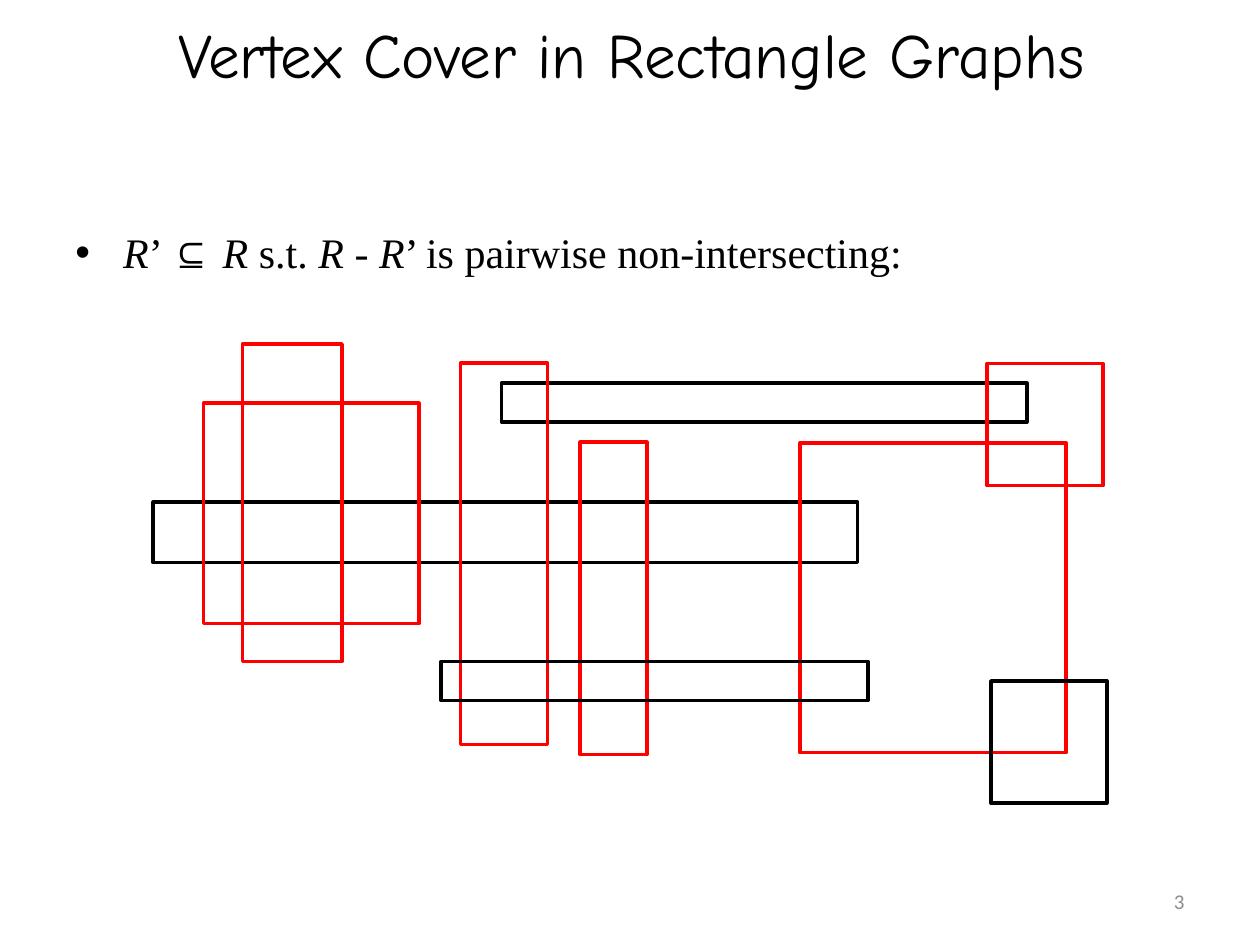
from collections import namedtuple
from dataclasses import dataclass

from lxml import etree
from pptx import Presentation
from pptx import util as u
from pptx.dml.color import RGBColor
from pptx.enum import shapes, text
from pptx.oxml.ns import qn

Box = namedtuple("Box", "left top width height")  # columns and rows of the page grid


@dataclass(frozen=True)
class Theme:
    cell: int = u.Inches(0.1)  # the page is 100 columns by 75 rows
    ink: RGBColor = RGBColor(0, 0, 0)
    cover: RGBColor = RGBColor(255, 0, 0)
    muted: RGBColor = RGBColor(0x8C, 0x8C, 0x8C)
    title_font: str = "Comic Neue"
    body_font: str = "Times New Roman"
    number_font: str = "Calibri"
    title_size: int = u.Pt(36)
    body_size: int = u.Pt(24)
    number_size: int = u.Pt(12)
    outline: int = u.Pt(2)


THEME = Theme()

STATEMENT = [  # text, italic
    ("R", True), ("’ ⊆ ", False), ("R ", True), ("s.t. ", False), ("R", True),
    (" - ", False), ("R", True), ("’ is pairwise non-intersecting:", False),
]

# Rectangles relative to the diagram's top left corner, from back to front
INDEPENDENT_BACK = [Box(0, 12.55, 55.9, 4.8), Box(27.65, 3.1, 41.7, 3.1)]
VERTEX_COVER = [
    Box(7.1, 0, 7.9, 25.2), Box(24.4, 1.5, 6.9, 30.3), Box(33.9, 7.8, 5.3, 24.8),
    Box(66.2, 1.55, 9.2, 9.7), Box(4, 4.7, 17.1, 17.5), Box(51.35, 7.85, 21.1, 24.6),
]
INDEPENDENT_FRONT = [Box(22.85, 25.2, 33.9, 3.1), Box(66.5, 26.75, 9.2, 9.7)]


def to_emu(box):
    return [round(value * THEME.cell) for value in box]


def style(font, name, size, color):
    font.name, font.size, font.color.rgb = name, size, color


def add_title(page, box, words):
    title = page.shapes.title
    title.left, title.top, title.width, title.height = to_emu(box)
    frame = title.text_frame
    frame.text = words
    frame.vertical_anchor = text.MSO_ANCHOR.MIDDLE
    para = frame.paragraphs[0]
    para.alignment = text.PP_ALIGN.CENTER
    style(para.runs[0].font, THEME.title_font, THEME.title_size, THEME.ink)


def add_statement(page, box, spans):
    frame = page.shapes.add_textbox(*to_emu(box)).text_frame
    frame.word_wrap = True
    para = frame.paragraphs[0]
    para.space_before = u.Emu(THEME.body_size // 5)
    for words, italic in spans:
        span = para.add_run()
        span.text = words
        style(span.font, THEME.body_font, THEME.body_size, THEME.ink)
        span.font.italic = italic
    # Bullet with a hanging indent
    properties = para._p.get_or_add_pPr()
    indent = u.Inches(0.38)
    properties.set("marL", str(int(indent)))
    properties.set("indent", str(-int(indent)))
    etree.SubElement(properties, qn("a:buFont"), typeface="Arial")
    etree.SubElement(properties, qn("a:buChar"), char="•")


def add_rectangles(parent, area, boxes, color):
    for box in boxes:
        placed = box._replace(left=area.left + box.left, top=area.top + box.top)
        rectangle = parent.add_shape(shapes.MSO_SHAPE.RECTANGLE, *to_emu(placed))
        rectangle.shadow.inherit = False
        rectangle.fill.background()
        rectangle.line.color.rgb = color
        rectangle.line.width = THEME.outline


def add_diagram(page, area):
    add_rectangles(page.shapes, area, INDEPENDENT_BACK, THEME.ink)
    cover = page.shapes.add_group_shape()
    add_rectangles(cover.shapes, area, VERTEX_COVER, THEME.cover)
    add_rectangles(page.shapes, area, INDEPENDENT_FRONT, THEME.ink)


def add_page_number(page, box, number):
    frame = page.shapes.add_textbox(*to_emu(box)).text_frame
    frame.word_wrap = True
    frame.vertical_anchor = text.MSO_ANCHOR.MIDDLE
    para = frame.paragraphs[0]
    para.text = number
    para.alignment = text.PP_ALIGN.RIGHT
    style(para.runs[0].font, THEME.number_font, THEME.number_size, THEME.muted)


def main():
    deck = Presentation()
    deck.slide_width, deck.slide_height = 100 * THEME.cell, 75 * THEME.cell
    page = deck.slides.add_slide(deck.slide_layouts[5])  # title only
    add_title(page, Box(5.1, 0, 90, 8.4), "Vertex Cover in Rectangle Graphs")
    add_statement(page, Box(5, 17.5, 86.7, 7.4), STATEMENT)
    add_diagram(page, Box(12.15, 27.3, 75.7, 36.45))
    add_page_number(page, Box(71.7, 69.5, 23.3, 4), "3")
    deck.save("out.pptx")


if __name__ == "__main__":
    main()
